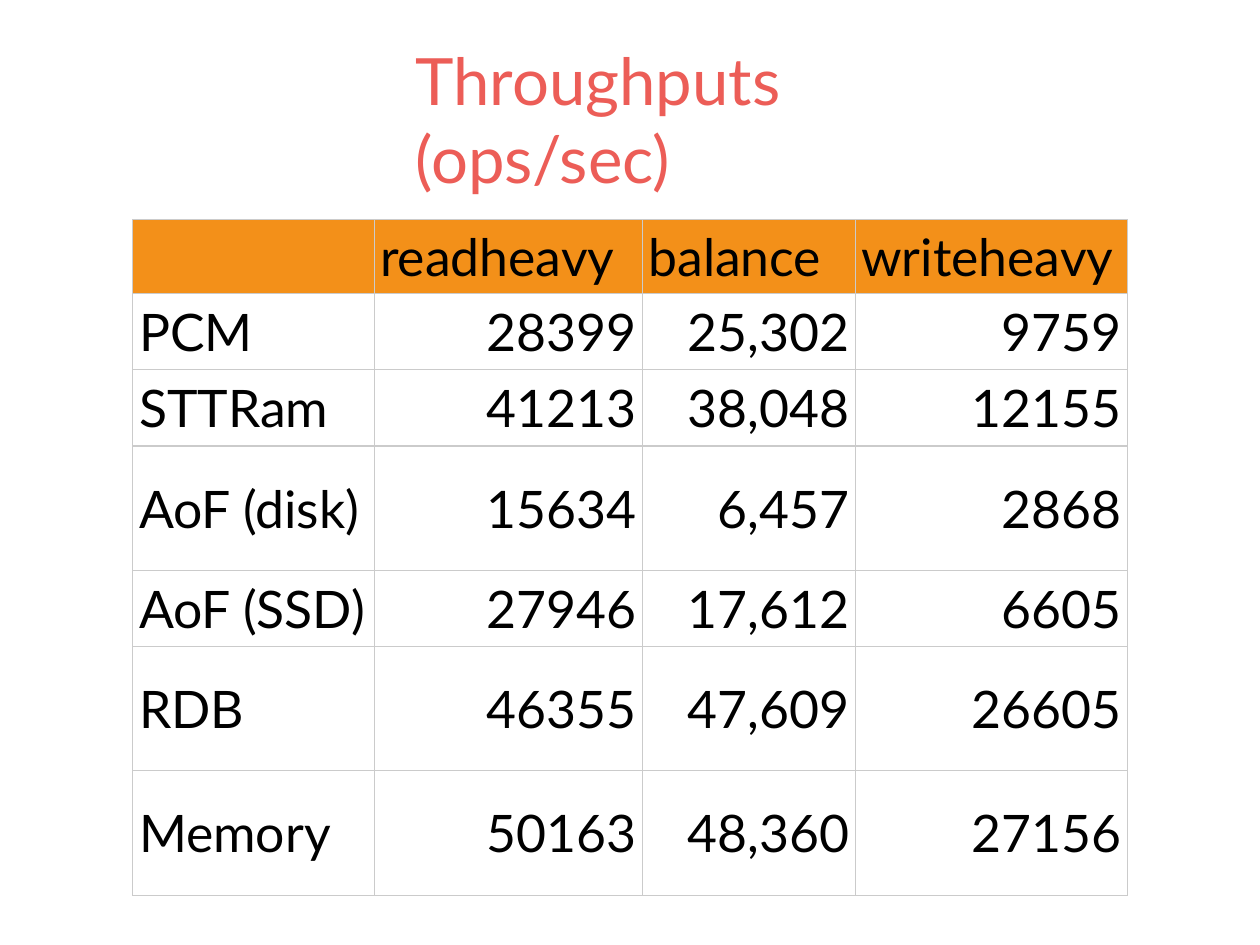
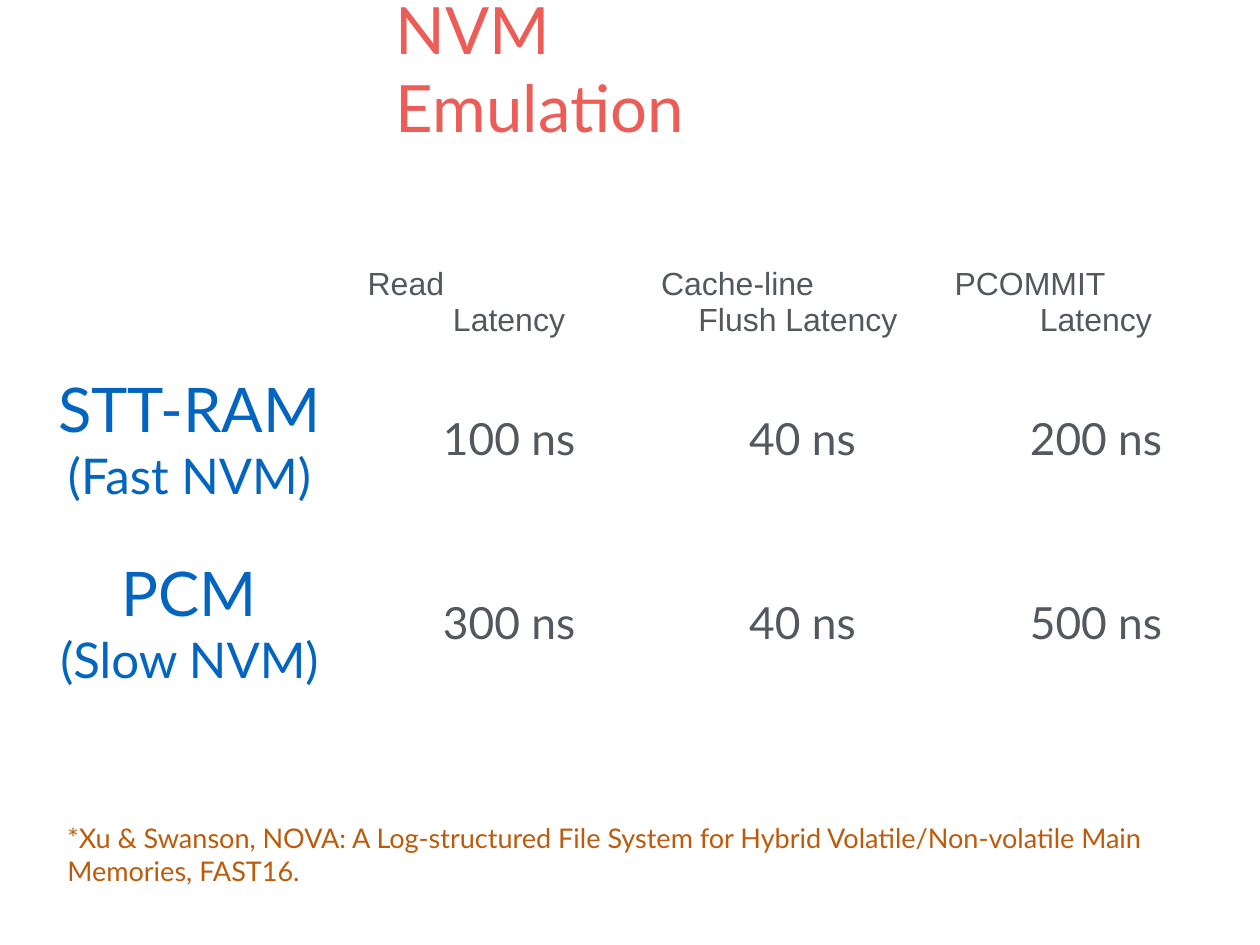
from lxml.etree import SubElement
from pptx import Presentation
from pptx.dml.color import RGBColor
from pptx.enum.text import MSO_ANCHOR, MSO_AUTO_SIZE, PP_ALIGN
from pptx.oxml.ns import qn
from pptx.util import Pt

CORAL = RGBColor(0xEC, 0x5D, 0x57)
ORANGE = RGBColor(0xF3, 0x90, 0x19)
BLUE = RGBColor(0x03, 0x65, 0xC0)
SLATE = RGBColor(0x53, 0x58, 0x5F)
RUST = RGBColor(0xBD, 0x5B, 0x0C)
BLACK = RGBColor(0, 0, 0)
WHITE = RGBColor(0xFF, 0xFF, 0xFF)
GRID = RGBColor(0xCB, 0xCB, 0xCB)

LEFT, CENTER, RIGHT = PP_ALIGN.LEFT, PP_ALIGN.CENTER, PP_ALIGN.RIGHT
INSET = 4.3

THROUGHPUTS = [
    ("", "readheavy", "balance", "writeheavy"),
    ("PCM", "28399", "25,302", "9759"),
    ("STTRam", "41213", "38,048", "12155"),
    ("AoF (disk)", "15634", "6,457", "2868"),
    ("AoF (SSD)", "27946", "17,612", "6605"),
    ("RDB", "46355", "47,609", "26605"),
    ("Memory", "50163", "48,360", "27156"),
]
LATENCY_HEADS = [("Read ", "Latency"), ("Cache-line", "Flush Latency "),
                 ("PCOMMIT", "Latency")]
LATENCIES = [
    ("STT-RAM", "(Fast NVM)", ("100 ns", "40 ns", "200 ns")),
    ("PCM", "(Slow NVM)", ("300 ns", "40 ns", "500 ns")),
]


def write(frame, text, size, color, font="Lato", align=LEFT):
    """Fill the first paragraph, or add one if the frame already has text."""
    paragraph = frame.add_paragraph() if frame.text else frame.paragraphs[0]
    paragraph.text = text
    paragraph.alignment = align
    for run in paragraph.runs:
        run.font.size = Pt(size)
        run.font.name = font
        run.font.color.rgb = color


def add_text(slide, left, top, width, height, text, **style):
    frame = slide.shapes.add_textbox(
        Pt(left), Pt(top), Pt(width), Pt(height)).text_frame
    frame.word_wrap = True
    frame.auto_size = MSO_AUTO_SIZE.SHAPE_TO_FIT_TEXT
    frame.vertical_anchor = MSO_ANCHOR.MIDDLE
    frame.margin_left = frame.margin_right = Pt(INSET)
    frame.margin_top = frame.margin_bottom = Pt(INSET)
    write(frame, text, **style)


def add_title(slide, left, top, width, text):
    add_text(slide, left, top, width, 71, text, size=53, color=CORAL)


def add_grid(slide, left, top, columns, rows, inset_x, inset_y):
    """Add a plain white table with the given column widths and row heights."""
    table = slide.shapes.add_table(
        len(rows), len(columns), Pt(left), Pt(top),
        Pt(sum(columns)), Pt(sum(rows))).table
    table.first_row = table.horz_banding = False
    for column, width in zip(table.columns, columns):
        column.width = Pt(width)
    for row, height in zip(table.rows, rows):
        row.height = Pt(height)
    for cell in table.iter_cells():
        cell.vertical_anchor = MSO_ANCHOR.MIDDLE
        cell.margin_left = cell.margin_right = Pt(inset_x)
        cell.margin_top = cell.margin_bottom = Pt(inset_y)
        fill_cell(cell, WHITE)
    return table


def fill_cell(cell, color):
    cell.fill.solid()
    cell.fill.fore_color.rgb = color


def border_cell(cell, color, width):
    properties = cell._tc.get_or_add_tcPr()
    # Border lines come before the fill in the cell properties
    for index, side in enumerate(("a:lnL", "a:lnR", "a:lnT", "a:lnB")):
        line = SubElement(properties, qn(side), w=str(Pt(width)))
        fill = SubElement(line, qn("a:solidFill"))
        SubElement(fill, qn("a:srgbClr"), val=str(color))
        properties.insert(index, line)


def build_throughputs(slide):
    add_title(slide, 333.5, 60.5, 523.5, "Throughputs\v(ops/sec)")
    table = add_grid(slide, 108, 178.5, (196, 218, 173, 221),
                     (60, 62, 62, 101, 62, 101, 101), 5, 0)
    for r, values in enumerate(THROUGHPUTS):
        for c, value in enumerate(values):
            cell = table.cell(r, c)
            if r == 0:
                fill_cell(cell, ORANGE)
            border_cell(cell, GRID, 1)
            write(cell.text_frame, value, size=42, color=BLACK,
                  align=RIGHT if r and c else LEFT)


def build_emulation(slide):
    add_title(slide, 317.5, 19.5, 381, "NVM\vEmulation")
    table = add_grid(slide, 13.5, 210, (281, 238.5, 238.5, 238.5),
                     (71, 150, 150), INSET, INSET)
    # Column heads: first line at the left, second line centred
    for c, lines in enumerate(LATENCY_HEADS, 1):
        for line, align in zip(lines, (LEFT, CENTER)):
            write(table.cell(0, c).text_frame, line, size=26, color=SLATE,
                  font="Arial", align=align)
    # Memory types and their latencies
    for r, (memory, speed, values) in enumerate(LATENCIES, 1):
        head = table.cell(r, 0).text_frame
        write(head, memory, size=50, color=BLUE, align=CENTER)
        write(head, speed, size=40, color=BLUE, align=CENTER)
        for c, value in enumerate(values, 1):
            write(table.cell(r, c).text_frame, value, size=36, color=SLATE,
                  align=CENTER)
    # Citation
    add_text(slide, 50.5, 663, 951, 62,
             "*Xu & Swanson, NOVA: A Log-structured File System for Hybrid "
             "Volatile/Non-volatile Main Memories, FAST16.",
             size=22, color=RUST)


def main():
    deck = Presentation()
    deck.slide_width, deck.slide_height = Pt(1024), Pt(768)
    blank = deck.slide_layouts[6]
    for build in (build_throughputs, build_emulation):
        build(deck.slides.add_slide(blank))
    deck.save("out.pptx")


if __name__ == "__main__":
    main()
